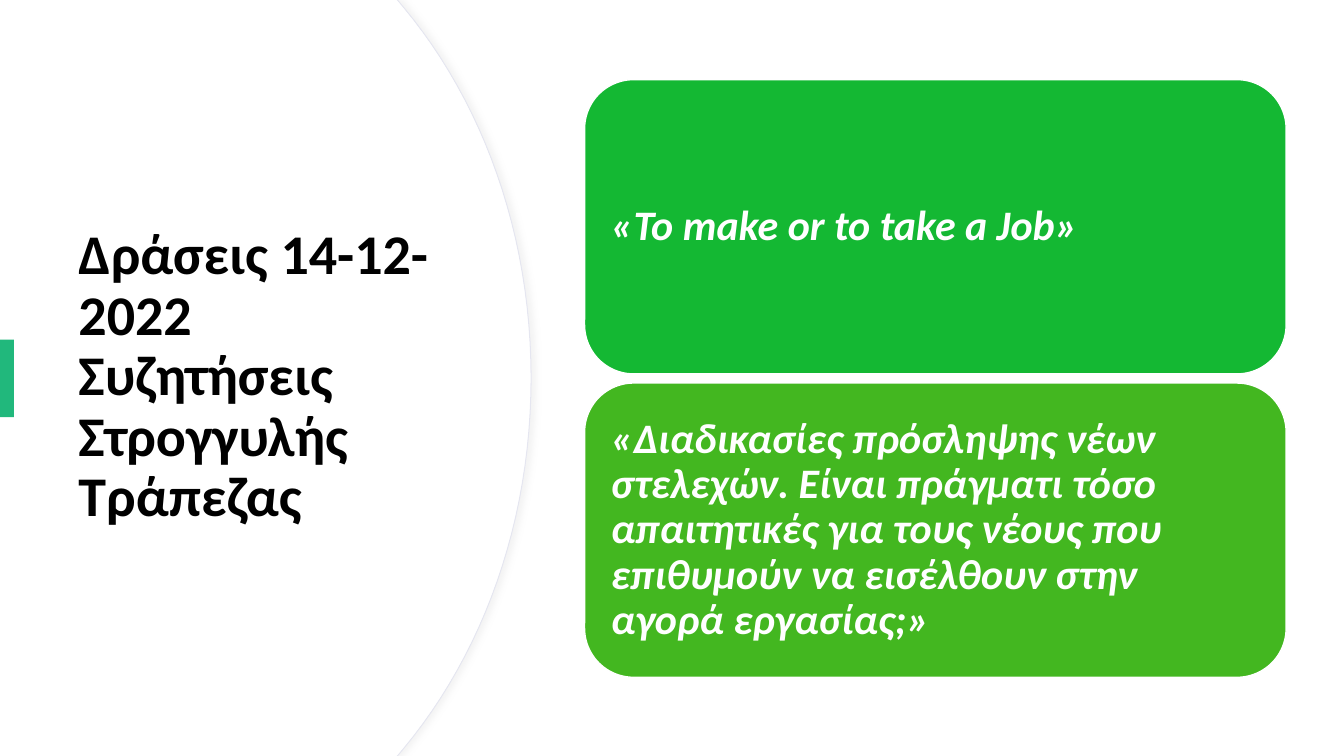
from dataclasses import dataclass

from lxml import etree
from pptx import Presentation
from pptx.dml.color import RGBColor
from pptx.enum.shapes import MSO_SHAPE
from pptx.enum.text import MSO_ANCHOR, PP_ALIGN
from pptx.oxml.ns import qn
from pptx.shapes.autoshape import Shape
from pptx.slide import Slide
from pptx.util import Pt

RECT = MSO_SHAPE.RECTANGLE
ROUNDED = MSO_SHAPE.ROUNDED_RECTANGLE
MIDDLE = MSO_ANCHOR.MIDDLE
LEFT = PP_ALIGN.LEFT

WHITE = RGBColor(0xFF, 0xFF, 0xFF)
BLACK = RGBColor(0x00, 0x00, 0x00)
EDGE = RGBColor(0xE5, 0xE6, 0xF0)
SHADOW = RGBColor(0xD9, 0xD9, 0xD9)
TEAL = RGBColor(0x21, 0xB8, 0x7C)
GREEN = RGBColor(0x14, 0xB8, 0x33)
LIME = RGBColor(0x43, 0xB7, 0x20)

WIDTH, HEIGHT = 960, 540
CARD_LEFT, CARD_TOP, CARD_WIDTH, CARD_HEIGHT = 417.6, 56.9, 501.1, 210.2
CARD_PITCH = 216.7
CURVE = ((288.7, 5.8), (344.9, 73.4), (379.4, 167), (379.4, 270))
CURVE_STEPS = 24

TITLE_FONT = {"name": "Calibri", "size": Pt(40), "bold": True}
CARD_FONT = {"name": "Calibri", "size": Pt(30), "bold": True, "italic": True}


@dataclass
class Card:
    text: str
    fill: RGBColor


CARDS = [
    Card("«To make or to take a Job»", GREEN),
    Card("«Διαδικασίες πρόσληψης νέων στελεχών. Είναι πράγματι τόσο "
         "απαιτητικές για τους νέους που επιθυμούν να εισέλθουν στην "
         "αγορά εργασίας;»", LIME),
]


def paint(sp: Shape, fill: RGBColor, line: RGBColor | None = None,
          weight: float = 1) -> None:
    sp.shadow.inherit = False
    sp.fill.solid()
    sp.fill.fore_color.rgb = fill
    if line is None:
        sp.line.fill.background()
    else:
        sp.line.color.rgb = line
        sp.line.width = Pt(weight)


def write(sp: Shape, text: str, font: dict, color: RGBColor,
          inset_x: float, inset_y: float) -> None:
    tf = sp.text_frame
    frame_format = {
        "word_wrap": True, "vertical_anchor": MIDDLE,
        "margin_left": Pt(inset_x), "margin_right": Pt(inset_x),
        "margin_top": Pt(inset_y), "margin_bottom": Pt(inset_y),
    }
    for name, value in frame_format.items():
        setattr(tf, name, value)
    p = tf.paragraphs[0]
    p.text = text
    p.alignment = LEFT
    p.line_spacing = 0.9
    for r in p.runs:
        for name, value in font.items():
            setattr(r.font, name, value)
        r.font.color.rgb = color


def add_shadow(sp: Shape, blur: float, distance: float, opacity: int) -> None:
    effects = sp._element.spPr.find(qn("a:effectLst"))
    outer = etree.SubElement(effects, qn("a:outerShdw"), blurRad=str(Pt(blur)),
                             dist=str(Pt(distance)), dir="0", rotWithShape="0")
    color = etree.SubElement(outer, qn("a:srgbClr"), val=str(SHADOW))
    etree.SubElement(color, qn("a:alpha"), val=str(opacity * 1000))


def curve_point(t: float) -> tuple[float, float]:
    weights = ((1 - t) ** 3, 3 * t * (1 - t) ** 2, 3 * t ** 2 * (1 - t), t ** 3)
    return (sum(w * x for w, (x, _) in zip(weights, CURVE)),
            sum(w * y for w, (_, y) in zip(weights, CURVE)))


def add_panel(slide: Slide, shift: float) -> Shape:
    upper = [(283.9, 0)]
    upper += [curve_point(i / CURVE_STEPS) for i in range(CURVE_STEPS + 1)]
    lower = [(x, HEIGHT - y) for x, y in reversed(upper[:-1])]
    outline = [(x - shift, y) for x, y in upper + lower] + [(0, HEIGHT)]
    builder = slide.shapes.build_freeform(0, 0)
    builder.add_line_segments([(Pt(x), Pt(y)) for x, y in outline], close=True)
    return builder.convert_to_shape()


def add_card(slide: Slide, card: Card, top: float) -> None:
    sp = slide.shapes.add_shape(ROUNDED, Pt(CARD_LEFT), Pt(top),
                                Pt(CARD_WIDTH), Pt(CARD_HEIGHT))
    paint(sp, card.fill, WHITE)
    write(sp, card.text, CARD_FONT, WHITE, 8.6, 8.6)


def main() -> None:
    prs = Presentation()
    prs.slide_width, prs.slide_height = Pt(WIDTH), Pt(HEIGHT)
    slide = prs.slides.add_slide(prs.slide_layouts[6])

    rim = add_panel(slide, 0)
    paint(rim, WHITE, EDGE, 0.75)
    add_shadow(rim, 4, 3, 30)
    paint(add_panel(slide, 0.7), WHITE)

    title = slide.shapes.add_textbox(Pt(49), Pt(91.4), Pt(283.7), Pt(356.4))
    write(title, "Δράσεις 14-12-2022\vΣυζητήσεις Στρογγυλής Τράπεζας",
          TITLE_FONT, BLACK, 7.2, 3.6)

    accent = slide.shapes.add_shape(RECT, 0, Pt(242.6), Pt(10), Pt(55.4))
    paint(accent, TEAL)

    for i, card in enumerate(CARDS):
        add_card(slide, card, CARD_TOP + i * CARD_PITCH)

    prs.save("out.pptx")


if __name__ == "__main__":
    main()
